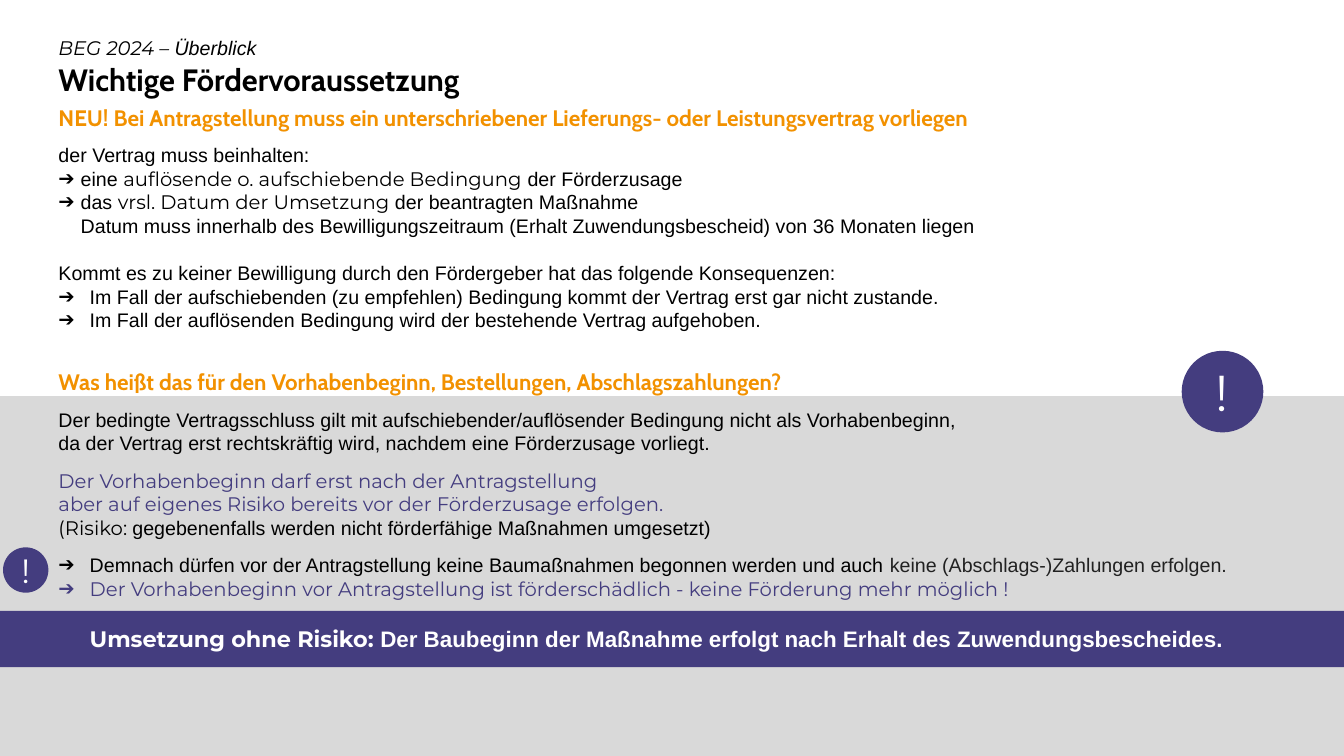
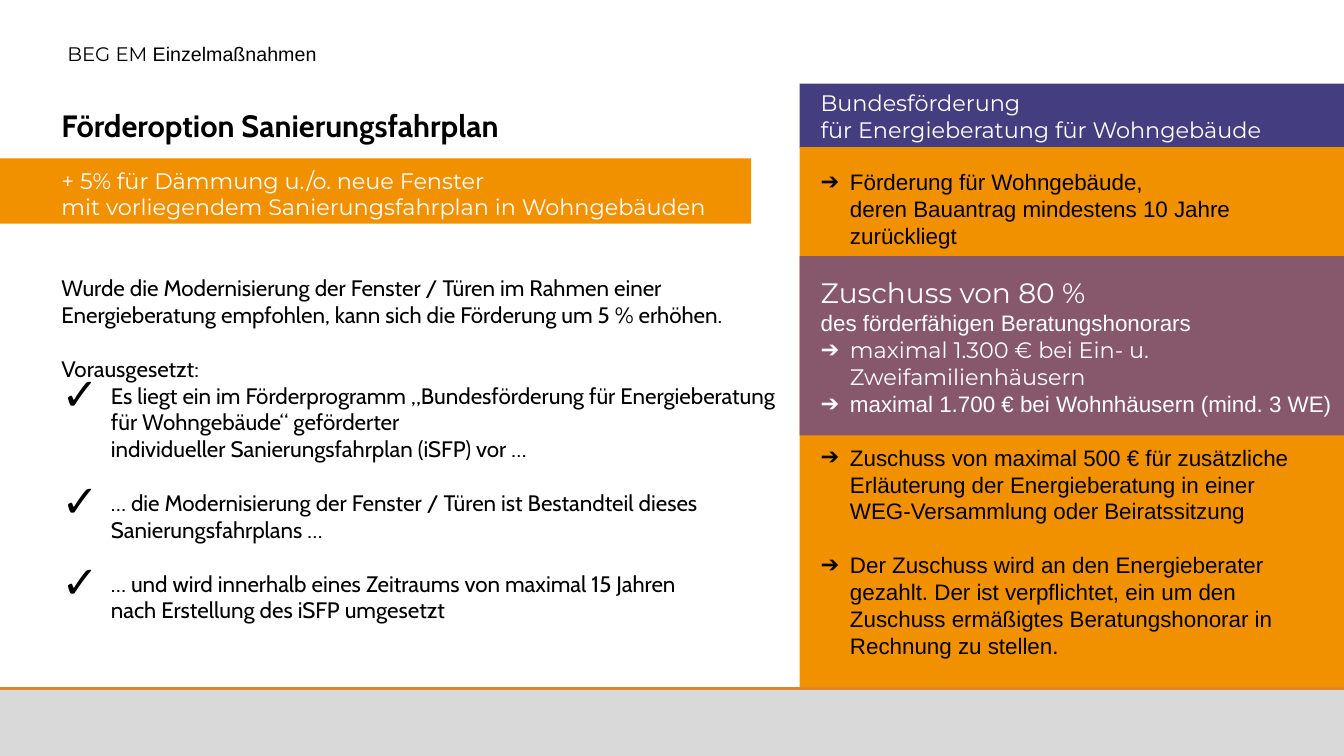
from dataclasses import dataclass
from typing import Optional

from lxml.etree import SubElement
from pptx import Presentation
from pptx.dml.color import RGBColor
from pptx.enum.shapes import MSO_CONNECTOR, MSO_SHAPE
from pptx.enum.text import MSO_ANCHOR, MSO_AUTO_SIZE, PP_ALIGN
from pptx.oxml.ns import qn
from pptx.util import Inches, Pt


# Theme: colours, fonts and type sizes
@dataclass(frozen=True)
class Theme:
    black: str = "000000"
    charcoal: str = "212121"
    white: str = "FFFFFF"
    grey: str = "D9D9D9"
    purple: str = "443D7F"
    orange: str = "F29100"
    mauve: str = "87586B"
    rule: str = "DE842D"
    plain: str = "Arial"
    heading: str = "Cabin"
    accent: str = "Montserrat"
    title_size: int = 22
    large_size: int = 20
    lead_size: int = 16
    text_size: int = 14
    line_factor: float = 1.2


THEME = Theme()
SLIDE_WIDTH, SLIDE_HEIGHT = 13.33, 7.5
FOOTER_TOP = 6.83


@dataclass(frozen=True)
class Box:
    left: float
    top: float
    width: float
    height: float

    def lengths(self) -> list:
        return [Inches(value) for value in (self.left, self.top, self.width, self.height)]


@dataclass(frozen=True)
class Run:
    text: str
    font: str = THEME.plain
    color: str = THEME.black
    bold: bool = False
    italic: bool = False


@dataclass(frozen=True)
class Line:
    runs: tuple
    size: int = THEME.text_size
    before: float = 0
    bullet: Optional[str] = None
    indent: float = 0
    bullet_percent: int = 100
    alignment: PP_ALIGN = PP_ALIGN.LEFT


@dataclass(frozen=True)
class Band:
    box: Box
    color: str
    lines: tuple = ()
    left_inset: float = 0
    top_inset: float = 0
    kind: MSO_SHAPE = MSO_SHAPE.RECTANGLE


def arrow(*runs: Run, indent: float, **options) -> Line:
    return Line(runs, bullet="➔", indent=indent, **options)


def check(text: str, before: float = 0) -> Line:
    return Line((Run(text, THEME.heading),), THEME.lead_size, before, "✓", 0.49, 200)


# Text
def set_bullet(paragraph, line: Line) -> None:
    properties = paragraph._p.get_or_add_pPr()
    properties.set("marL", str(Inches(line.indent)))
    properties.set("indent", str(-Inches(line.indent)))
    if line.bullet is None:
        SubElement(properties, qn("a:buNone"))
        return
    for tag, name, value in (
        ("a:buSzPct", "val", str(line.bullet_percent * 1000)),
        ("a:buFont", "typeface", THEME.plain),
        ("a:buChar", "char", line.bullet),
    ):
        SubElement(properties, qn(tag)).set(name, value)


def write_run(paragraph, run: Run, size: int) -> None:
    formats = {"name": run.font, "size": Pt(size), "bold": run.bold, "italic": run.italic}
    for index, text in enumerate(run.text.split("\n")):
        if index:
            paragraph.add_line_break()
        if not text:
            continue
        piece = paragraph.add_run()
        piece.text = text
        for name, value in formats.items():
            setattr(piece.font, name, value)
        piece.font.color.rgb = RGBColor.from_string(run.color)


def write_lines(text_frame, lines: tuple, **frame_formats) -> None:
    formats = {"word_wrap": True, "auto_size": MSO_AUTO_SIZE.NONE,
               "vertical_anchor": MSO_ANCHOR.TOP} | frame_formats
    for name, value in formats.items():
        setattr(text_frame, name, value)
    for index, line in enumerate(lines):
        paragraph = text_frame.add_paragraph() if index else text_frame.paragraphs[0]
        set_bullet(paragraph, line)
        paragraph.alignment = line.alignment
        paragraph.line_spacing = Pt(line.size * THEME.line_factor)
        paragraph.space_before = Pt(line.before)
        paragraph.space_after = Pt(0)
        for run in line.runs:
            write_run(paragraph, run, line.size)


# Shapes
def add_band(slide, band: Band) -> None:
    shape = slide.shapes.add_shape(band.kind, *band.box.lengths())
    shape.shadow.inherit = False
    shape.fill.solid()
    shape.fill.fore_color.rgb = RGBColor.from_string(band.color)
    shape.line.fill.background()
    if band.lines:
        write_lines(shape.text_frame, band.lines, vertical_anchor=MSO_ANCHOR.MIDDLE,
                    margin_left=Inches(band.left_inset), margin_right=0,
                    margin_top=Inches(band.top_inset), margin_bottom=0)


def warning_circle(left: float, top: float, diameter: float, size: int) -> Band:
    mark = Line((Run("!", THEME.accent, THEME.white),), size, alignment=PP_ALIGN.CENTER)
    return Band(Box(left, top, diameter, diameter), THEME.purple, (mark,), kind=MSO_SHAPE.OVAL)


def add_footer(slide) -> None:
    add_band(slide, Band(Box(0, FOOTER_TOP, SLIDE_WIDTH, SLIDE_HEIGHT - FOOTER_TOP), THEME.grey))
    rule = slide.shapes.add_connector(MSO_CONNECTOR.STRAIGHT, 0, Inches(FOOTER_TOP),
                                      Inches(SLIDE_WIDTH), Inches(FOOTER_TOP))
    rule.line.color.rgb = RGBColor.from_string(THEME.rule)
    rule.line.width = Pt(1.5)
    SubElement(rule._element.spPr, qn("a:effectLst"))


def fill_placeholder(placeholder, box: Box, lines: tuple) -> None:
    names = ("left", "top", "width", "height")
    for name, value in zip(names, box.lengths()):
        setattr(placeholder, name, value)
    write_lines(placeholder.text_frame, lines)
    # Bring the text in front of the bands
    element = placeholder.element
    element.getparent().append(element)


def add_slide(presentation, layout: int, kicker: tuple, kicker_box: Box, title: str,
              title_box: Box, bands: tuple, bodies: tuple) -> None:
    slide = presentation.slides.add_slide(presentation.slide_layouts[layout])
    placeholders = list(slide.placeholders)
    add_footer(slide)
    for band in bands:
        add_band(slide, band)
    kicker_shape = slide.shapes.add_textbox(*kicker_box.lengths())
    write_lines(kicker_shape.text_frame, (Line(kicker),))
    heading = Line((Run(title, THEME.heading, bold=True),), THEME.title_size)
    contents = ((title_box, (heading,)), *bodies)
    for placeholder, (box, lines) in zip(placeholders, contents):
        fill_placeholder(placeholder, box, lines)


# Slide 1: conditions for funding
def add_conditions_slide(presentation) -> None:
    def subheading(text: str, before: float = 0) -> Line:
        return Line((Run(text, THEME.heading, THEME.orange, bold=True),),
                    THEME.lead_size, before)

    banner = Line((
        Run("Umsetzung ohne Risiko: ", THEME.accent, THEME.white, bold=True),
        Run("Der Baubeginn der Maßnahme erfolgt nach Erhalt des Zuwendungsbescheides.",
            color=THEME.white, bold=True),
    ), THEME.lead_size)
    bands = (
        Band(Box(0, 3.93, SLIDE_WIDTH, 2.97), THEME.grey),
        Band(Box(0, 6.06, SLIDE_WIDTH, 0.56), THEME.purple, (banner,), 0.89),
        warning_circle(11.72, 3.48, 0.81, 36),
        warning_circle(0.03, 5.43, 0.45, 24),
    )
    contract_indent, list_indent = 0.22, 0.31
    body = (
        subheading("NEU! Bei Antragstellung muss ein unterschriebener Lieferungs- "
                   "oder Leistungsvertrag vorliegen"),
        Line((Run("der Vertrag muss beinhalten:"),), before=9),
        arrow(Run("eine "), Run("auflösende o. aufschiebende Bedingung ", THEME.accent),
              Run("der Förderzusage"), indent=contract_indent),
        arrow(Run("das "), Run("vrsl. Datum der Umsetzung ", THEME.accent),
              Run("der beantragten Maßnahme\nDatum muss innerhalb des Bewilligungszeitraum "
                  "(Erhalt Zuwendungsbescheid) von 36 Monaten liegen"),
              indent=contract_indent),
        Line((Run("Kommt es zu keiner Bewilligung durch den Fördergeber hat das "
                  "folgende Konsequenzen:"),), before=16.8),
        arrow(Run("Im Fall der aufschiebenden (zu empfehlen) Bedingung kommt der "
                  "Vertrag erst gar nicht zustande."), indent=list_indent),
        arrow(Run("Im Fall der auflösenden Bedingung wird der bestehende Vertrag "
                  "aufgehoben."), indent=list_indent),
        subheading("Was heißt das für den Vorhabenbeginn, Bestellungen, "
                   "Abschlagszahlungen?", 26),
        Line((Run("Der bedingte Vertragsschluss gilt mit aufschiebender/auflösender "
                  "Bedingung nicht als Vorhabenbeginn,\nda der Vertrag erst rechtskräftig "
                  "wird, nachdem eine Förderzusage vorliegt."),), before=9),
        Line((Run("Der Vorhabenbeginn darf erst nach der Antragstellung\naber auf eigenes "
                  "Risiko bereits vor der Förderzusage erfolgen.\n",
                  THEME.accent, THEME.purple),
              Run("(Risiko: ", THEME.accent),
              Run("gegebenenfalls werden nicht förderfähige Maßnahmen umgesetzt)")),
             before=10),
        arrow(Run("Demnach dürfen vor der Antragstellung keine Baumaßnahmen begonnen "
                  "werden und auch "),
              Run("keine (Abschlags-)Zahlungen erfolgen.", color=THEME.charcoal),
              indent=list_indent, before=10),
        arrow(Run("Der Vorhabenbeginn vor Antragstellung ist förderschädlich - keine "
                  "Förderung mehr möglich !", THEME.accent, THEME.purple),
              indent=list_indent),
    )
    add_slide(presentation, 1,
              (Run("BEG 2024 – ", THEME.accent, italic=True), Run("Überblick", italic=True)),
              Box(0.48, 0.31, 11.88, 0.33), "Wichtige Fördervoraussetzung",
              Box(0.48, 0.55, 11.88, 0.47), bands, ((Box(0.48, 0.98, 12.17, 5.0), body),))


# Slide 2: renovation roadmap
def add_roadmap_slide(presentation) -> None:
    def banner(text: str) -> tuple:
        return (Line((Run(text, THEME.accent, THEME.white),), THEME.lead_size),)

    gap = THEME.lead_size * THEME.line_factor
    panel_left, panel_width = 7.93, 5.4
    bands = (
        Band(Box(panel_left, 0.83, panel_width, 0.64), THEME.purple,
             banner("Bundesförderung\nfür Energieberatung für Wohngebäude"), 0.21),
        Band(Box(0, 1.57, 7.45, 0.65), THEME.orange,
             banner("+ 5% für Dämmung u./o. neue Fenster\nmit vorliegendem "
                    "Sanierungsfahrplan in Wohngebäuden"), 0.61, 0.05),
        Band(Box(panel_left, 1.46, panel_width, 5.36), THEME.orange),
        Band(Box(panel_left, 2.54, panel_width, 1.78), THEME.mauve),
    )
    requirements = (
        Line((Run("Wurde die Modernisierung der Fenster / Türen im Rahmen einer "
                  "Energieberatung empfohlen, kann sich die Förderung um 5 % erhöhen.",
                  THEME.heading),), THEME.lead_size),
        Line((Run("Vorausgesetzt:", THEME.heading),), THEME.lead_size, gap),
        check("Es liegt ein im Förderprogramm „Bundesförderung für Energieberatung für "
              "Wohngebäude“ geförderter\nindividueller Sanierungsfahrplan (iSFP) vor …"),
        check("… die Modernisierung der Fenster / Türen ist Bestandteil dieses "
              "Sanierungsfahrplans …", gap),
        check("… und wird innerhalb eines Zeitraums von maximal 15 Jahren\n"
              "nach Erstellung des iSFP umgesetzt", gap),
    )
    bullet = {"indent": 0.29, "size": THEME.lead_size}
    grants = (
        arrow(Run("Förderung für Wohngebäude,\nderen Bauantrag mindestens 10 Jahre "
                  "zurückliegt"), **bullet),
        Line((Run("Zuschuss von 80 %", THEME.accent, THEME.white),), THEME.large_size, gap),
        Line((Run("des förderfähigen Beratungshonorars", color=THEME.white),),
             THEME.lead_size),
        arrow(Run("maximal 1.300 € bei Ein- u. Zweifamilienhäusern", THEME.accent,
                  THEME.white), **bullet),
        arrow(Run("maximal 1.700 € bei Wohnhäusern (mind. 3 WE)", color=THEME.white),
              **bullet),
        arrow(Run("Zuschuss von maximal 500 € für zusätzliche Erläuterung der "
                  "Energieberatung in einer\nWEG-Versammlung oder Beiratssitzung"),
              before=gap, **bullet),
        arrow(Run("Der Zuschuss wird an den Energieberater gezahlt. Der ist verpflichtet, "
                  "ein um den Zuschuss ermäßigtes Beratungshonorar in Rechnung zu stellen."),
              before=gap, **bullet),
    )
    add_slide(presentation, 3,
              (Run("BEG EM ", THEME.accent), Run("Einzelmaßnahmen")),
              Box(0.57, 0.37, 4.9, 0.33), "Förderoption Sanierungsfahrplan",
              Box(0.51, 1.01, 6.9, 0.47), bands,
              ((Box(0.51, 2.67, 7.41, 4.1), requirements), (Box(8.04, 1.62, 5.3, 5.2), grants)))


def main() -> None:
    presentation = Presentation()
    presentation.slide_width = Inches(SLIDE_WIDTH)
    presentation.slide_height = Inches(SLIDE_HEIGHT)
    add_conditions_slide(presentation)
    add_roadmap_slide(presentation)
    presentation.save("out.pptx")


if __name__ == "__main__":
    main()
